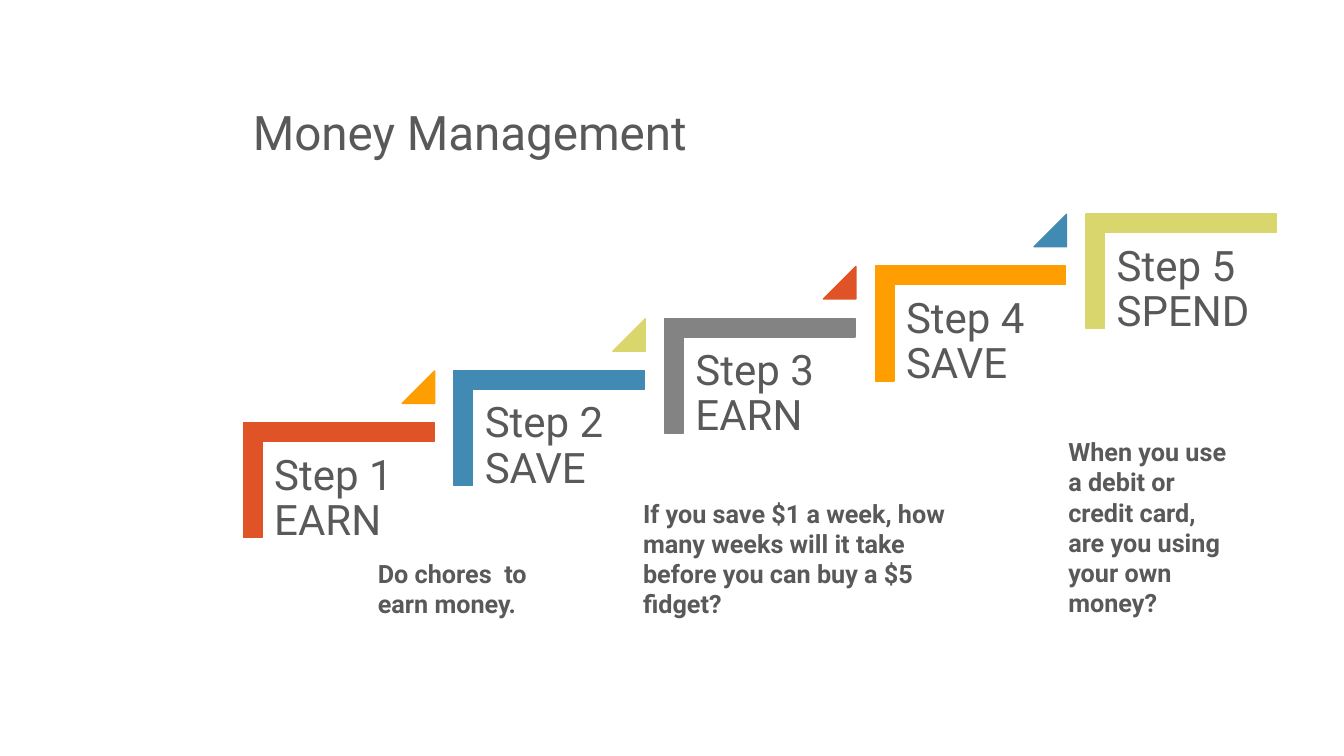
import pptx
import pptx.dml.color
import pptx.enum.shapes
import pptx.enum.text
import pptx.util
from dataclasses import dataclass

Pt = pptx.util.Pt
SHAPES = pptx.enum.shapes.MSO_SHAPE
ANCHORS = pptx.enum.text.MSO_ANCHOR


@dataclass(frozen=True)
class Theme:
    font: str = "Roboto"
    text: str = "595959"
    red: str = "DF5327"
    blue: str = "418AB3"
    gray: str = "838383"
    orange: str = "FE9E00"
    lime: str = "D9D66D"
    title_size: int = 34
    step_size: int = 30
    note_size: int = 18


class SlideBuilder:
    """Holds the theme and the current slide."""

    def __init__(self, page, theme):
        self.page = page
        self.theme = theme

    def text(self, bounds, words, size, bold=False, anchor=ANCHORS.TOP, inset=None, spacing=1.0):
        box = self.page.shapes.add_textbox(*map(Pt, bounds))
        frame = box.text_frame
        frame_format = {"word_wrap": True, "vertical_anchor": anchor}
        if inset is not None:
            for side in ("left", "top", "right", "bottom"):
                frame_format[f"margin_{side}"] = Pt(inset)
        for name, value in frame_format.items():
            setattr(frame, name, value)
        para = frame.paragraphs[0]
        para.text = words
        para.line_spacing = spacing
        font_format = {"name": self.theme.font, "size": Pt(size), "bold": bold}
        for span in para.runs:
            for name, value in font_format.items():
                setattr(span.font, name, value)
            span.font.color.rgb = pptx.dml.color.RGBColor.from_string(self.theme.text)

    def shape(self, kind, bounds, color, adjustments, rotation=0):
        shape = self.page.shapes.add_shape(kind, *map(Pt, bounds))
        shape.shadow.inherit = False
        shape.rotation = rotation
        for index, value in enumerate(adjustments):
            shape.adjustments[index] = value
        rgb = pptx.dml.color.RGBColor.from_string(color)
        shape.fill.solid()
        shape.fill.fore_color.rgb = rgb
        shape.line.color.rgb = rgb
        shape.line.width = Pt(1)

    def step(self, left, top, label, color):
        # The corner is turned a quarter, so its bounds are upright
        self.shape(SHAPES.CORNER, (left, top, 82, 136), color, (0.161, 0.161), 90)
        self.text((left - 13.7, top + 40.5, 123, 108), label,
                  self.theme.step_size, inset=8.64, spacing=0.9)

    def riser(self, left, top, color):
        self.shape(SHAPES.ISOSCELES_TRIANGLE, (left + 86.4, top - 10, 23.2, 23.2), color, (1,))


def main():
    deck = pptx.Presentation()
    deck.slide_width, deck.slide_height = Pt(960), Pt(540)
    theme = Theme()
    builder = SlideBuilder(deck.slides.add_slide(deck.slide_layouts[6]), theme)

    # Title
    builder.text((173.5, 23.8, 738, 94.3), "Money Management", theme.title_size,
                 anchor=ANCHORS.BOTTOM, spacing=0.9)

    # Staircase: label, step color, color of the triangle leading upward
    steps = [
        ("Step 1 \vEARN", theme.red, theme.orange),
        ("Step 2\vSAVE", theme.blue, theme.lime),
        ("Step 3\vEARN", theme.gray, theme.red),
        ("Step 4\vSAVE", theme.orange, theme.blue),
        ("Step 5\vSPEND", theme.lime, None),
    ]
    for index, (label, color, riser_color) in enumerate(steps):
        left, top = 200.9 + index * 150.45, 275 - index * 37.3
        builder.step(left, top, label, color)
        if riser_color:
            builder.riser(left, top, riser_color)

    # Notes under the stairs
    notes = [
        ((452.2, 352.1, 238.3, 94.3),
         "If you save $1 a week, how many weeks will it take before you can buy a $5 fidget?"),
        ((756, 308.2, 131.8, 138.2),
         "When you use a debit or credit card, are you using your own money?"),
        ((262.8, 395.3, 144.7, 51.1), "Do chores  to earn money."),
    ]
    for bounds, words in notes:
        builder.text(bounds, words, theme.note_size, bold=True)

    deck.save("out.pptx")


if __name__ == "__main__":
    main()
